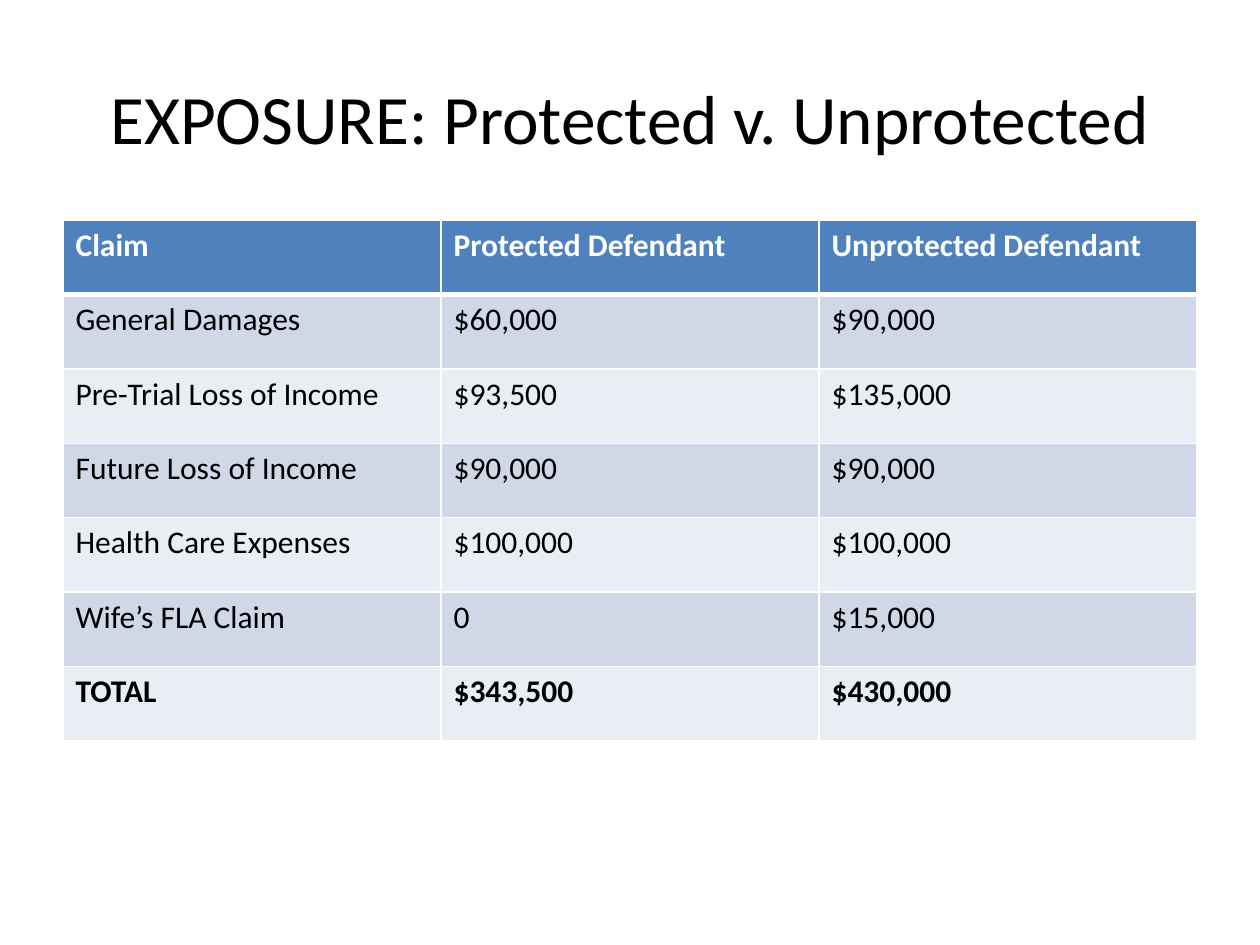
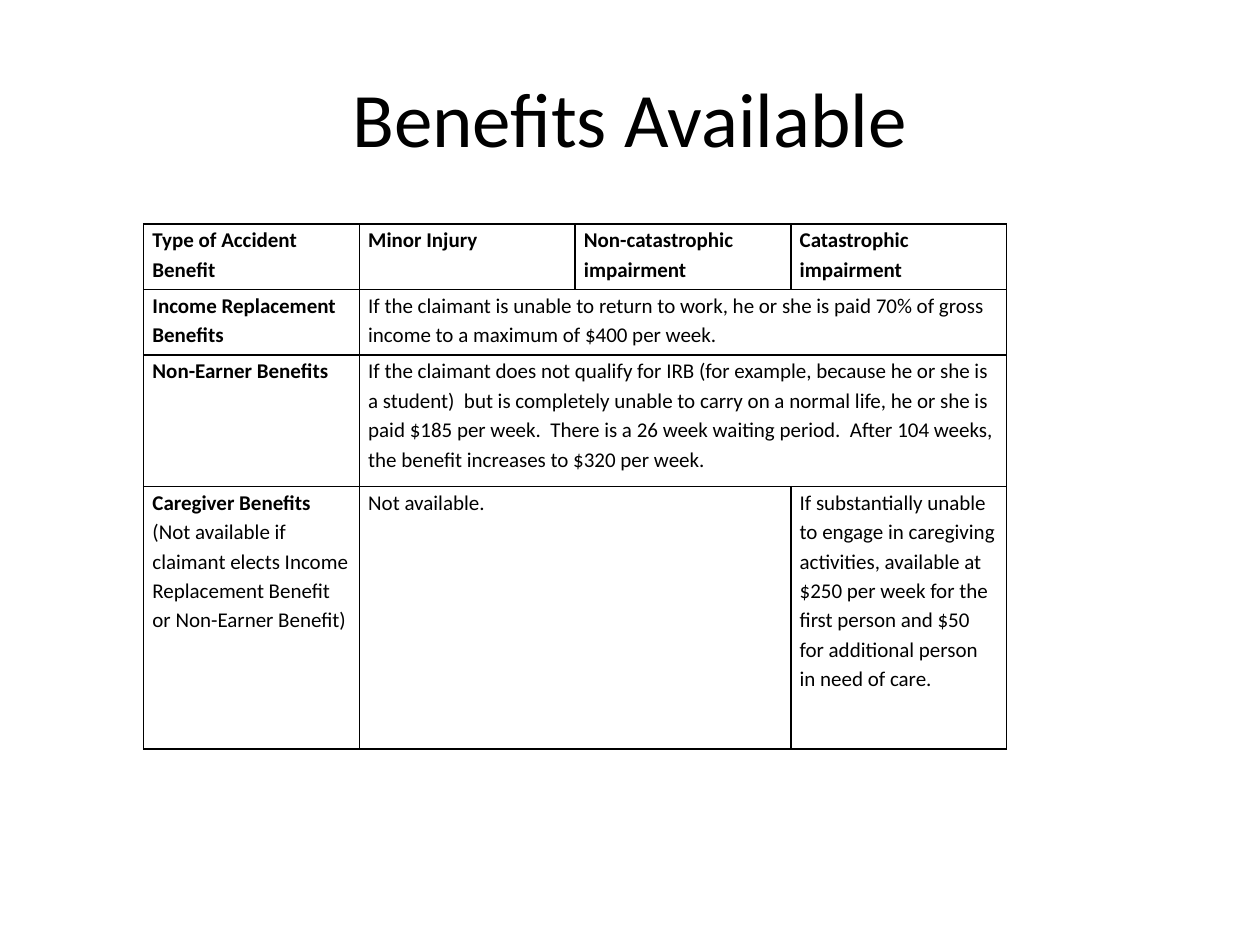
from dataclasses import dataclass

from lxml.etree import SubElement as Sub
from pptx import Presentation
from pptx.dml.color import RGBColor as Rgb
from pptx.enum.text import MSO_ANCHOR as Anchor, PP_ALIGN as Align
from pptx.oxml.ns import qn
from pptx.util import Inches, Pt


@dataclass(frozen=True)
class Theme:
    font: str = "Calibri"
    ink: str = "000000"
    paper: str = "FFFFFF"
    head: str = "4F81BD"
    bands: tuple = ("D0D8E8", "E9EDF4")
    title: float = 44
    body: float = 18
    small: float = 12


THEME = Theme()
WIDE, HIGH = Inches(10), Inches(7.5)

CLAIMS = [
    ("Claim", "Protected Defendant", "Unprotected Defendant"),
    ("General Damages", "$60,000", "$90,000"),
    ("Pre-Trial Loss of Income", "$93,500", "$135,000"),
    ("Future Loss of Income", "$90,000", "$90,000"),
    ("Health Care Expenses", "$100,000", "$100,000"),
    ("Wife’s FLA Claim", "0", "$15,000"),
    ("TOTAL", "$343,500", "$430,000"),
]

# Each benefit row: its name, a plain note after it, then (text, columns spanned)
HEADS = ("Type of Accident Benefit", "Minor Injury",
         "Non-catastrophic impairment", "Catastrophic impairment")
BENEFITS = [
    ("Income Replacement Benefits", "", [
        ("If the claimant is unable to return to work, he or she is paid 70% of "
         "gross income to a maximum of $400 per week.", 3)]),
    ("Non-Earner Benefits", "", [
        ("If the claimant does not qualify for IRB (for example, because he or "
         "she is a student)  but is completely unable to carry on a normal life, "
         "he or she is paid $185 per week.  There is a 26 week waiting period.  "
         "After 104 weeks, the benefit increases to $320 per week.", 3)]),
    ("Caregiver Benefits", " (Not available if claimant elects Income Replacement "
     "Benefit or Non-Earner Benefit)", [
         ("Not available.", 2),
         ("If substantially unable to engage in caregiving activities, available "
          "at $250 per week for the first person and $50 for additional person "
          "in need of care.", 1)]),
]


def write(frame, text, size=THEME.body, color=THEME.ink, bold=False,
          align=Align.LEFT, lead=None, note=""):
    """Write text, with an optional plain note after it."""
    para = frame.paragraphs[0]
    para.alignment = align
    if lead:
        para.line_spacing = lead
    for part, heavy in ((text, bold), (note, False)):
        if part:
            run = para.add_run()
            run.text = part
            run.font.name, run.font.size = THEME.font, Pt(size)
            run.font.bold = heavy
            run.font.color.rgb = Rgb.from_string(color)


def add_title(slide, text, size=THEME.title):
    box = slide.shapes.add_textbox(int(WIDE * 0.05), int(HIGH * 0.04),
                                   int(WIDE * 0.9), int(HIGH / 6))
    frame = box.text_frame
    frame.word_wrap = True
    frame.vertical_anchor = Anchor.MIDDLE
    write(frame, text, size=size, align=Align.CENTER)


def add_grid(slide, left, top, width, height, cols, shares):
    """Add a plain table; shares are the relative heights of its rows."""
    table = slide.shapes.add_table(
        len(shares), cols, int(WIDE * left), int(HIGH * top),
        int(WIDE * width), int(HIGH * height)).table
    table.first_row = table.horz_banding = False
    for row, share in zip(table.rows, shares):
        row.height = int(HIGH * height * share / sum(shares))
    return table


def edge(cell, color, top=1, bottom=1):
    """Rule the four sides of a cell; widths in points."""
    props = cell._tc.get_or_add_tcPr()
    for side, width in zip("LRTB", (1, 1, top, bottom)):
        line = Sub(props, qn(f"a:ln{side}"), w=str(Pt(width)))
        Sub(Sub(line, qn("a:solidFill")), qn("a:srgbClr"), val=color)


def paint(cell, color):
    cell.fill.solid()
    cell.fill.fore_color.rgb = Rgb.from_string(color)


def claim_table(slide):
    table = add_grid(slide, 0.05, 0.233, 0.9, 0.551, 3, [1] * len(CLAIMS))
    last = len(CLAIMS) - 1
    for r, row in enumerate(CLAIMS):
        head = r == 0
        for c, text in enumerate(row):
            cell = table.cell(r, c)
            edge(cell, THEME.paper, top=3 if r == 1 else 1,
                 bottom=3 if head else 1)
            paint(cell, THEME.head if head else THEME.bands[(r - 1) % 2])
            write(cell.text_frame, text, bold=r in (0, last),
                  color=THEME.paper if head else THEME.ink)


def benefit_table(slide):
    table = add_grid(slide, 0.114, 0.237, 0.685, 0.556, 4, [1, 1, 2, 4])
    for cell in table.iter_cells():
        edge(cell, THEME.ink)
        cell.fill.background()
        cell.margin_left = cell.margin_right = Inches(0.07)
        cell.margin_top = cell.margin_bottom = 0

    def put(r, c, text, **style):
        write(table.cell(r, c).text_frame, text, size=THEME.small, lead=1.15,
              **style)

    for c, text in enumerate(HEADS):
        put(0, c, text, bold=True)
    for r, (name, note, parts) in enumerate(BENEFITS, 1):
        put(r, 0, name, bold=True, note=note)
        c = 1
        for text, span in parts:
            if span > 1:
                table.cell(r, c).merge(table.cell(r, c + span - 1))
            put(r, c, text)
            c += span


def main():
    deck = Presentation()
    deck.slide_width, deck.slide_height = WIDE, HIGH
    blank = deck.slide_layouts[6]

    # Exposure by claim
    slide = deck.slides.add_slide(blank)
    add_title(slide, "EXPOSURE: Protected v. Unprotected", size=THEME.title * 0.9)
    claim_table(slide)

    # Benefits by injury
    slide = deck.slides.add_slide(blank)
    add_title(slide, "Benefits Available")
    benefit_table(slide)

    deck.save("out.pptx")


if __name__ == "__main__":
    main()
